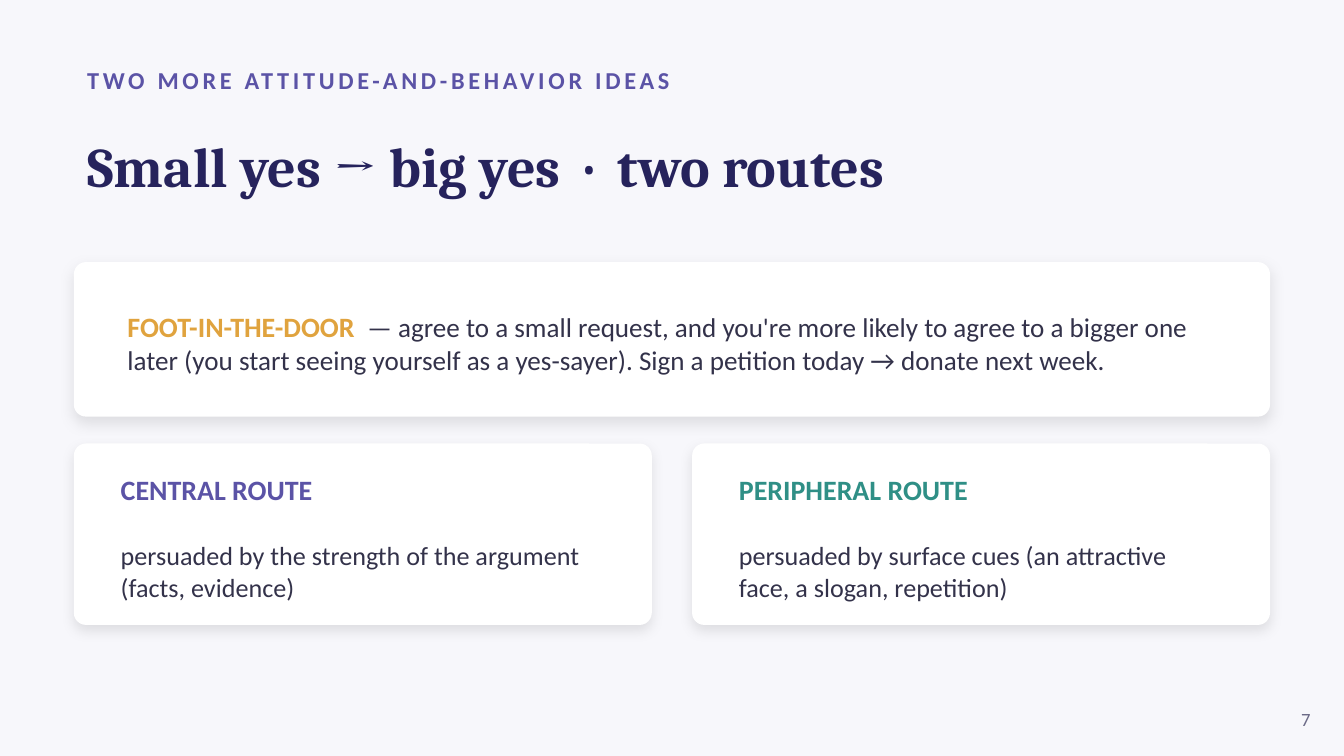
from lxml.etree import SubElement
from pptx import Presentation
from pptx.dml.color import RGBColor
from pptx.enum.shapes import MSO_SHAPE
from pptx.enum.text import MSO_ANCHOR, MSO_AUTO_SIZE, PP_ALIGN
from pptx.oxml import parse_xml
from pptx.oxml.ns import nsdecls, qn
from pptx.util import Inches, Pt

INK, NAVY, VIOLET, TEAL, AMBER = "33324A", "26235C", "5B53A6", "2F8F86", "E0A33E"


def rgb(value):
    return RGBColor.from_string(value)


def write(sp, box, paragraphs, align=PP_ALIGN.LEFT):
    """Place sp and fill it; each paragraph is a list of (text, size, colour, bold, font)."""
    sp.left, sp.top, sp.width, sp.height = [Inches(v) for v in box]
    tf = sp.text_frame
    tf.word_wrap = True
    tf.auto_size = MSO_AUTO_SIZE.NONE
    tf.vertical_anchor = MSO_ANCHOR.MIDDLE
    for i, runs in enumerate(paragraphs):
        p = tf.add_paragraph() if i else tf.paragraphs[0]
        p.alignment = align
        for text, size, colour, bold, font in runs:
            r = p.add_run()
            r.text = text
            r.font.size = Pt(size)
            r.font.bold = bold
            r.font.name = font
            r.font.color.rgb = rgb(colour)
    return tf


prs = Presentation()
prs.slide_width = Inches(10)
prs.slide_height = prs.slide_width * 9 // 16
s = prs.slides.add_slide(prs.slide_layouts[5])
s.background.fill.solid()
s.background.fill.fore_color.rgb = rgb("F7F7FB")
new_box = lambda: s.shapes.add_textbox(0, 0, 0, 0)

# Kicker and title
tf = write(new_box(), (0.55, 0.42, 9, 0.35),
           [[("TWO MORE ATTITUDE-AND-BEHAVIOR IDEAS", 13, VIOLET, True, "Calibri")]])
tf.paragraphs[0].runs[0].font._element.set("spc", "200")
write(s.shapes.title, (0.55, 0.78, 8.9, 0.9),
      [[("Small yes → big yes  ·  two routes", 30, NAVY, True, "Cambria")]])

# White cards with a soft shadow
for x, y, w, h in [(0.55, 1.95, 8.9, 1.15), (0.55, 3.3, 4.3, 1.35), (5.15, 3.3, 4.3, 1.35)]:
    card = s.shapes.add_shape(MSO_SHAPE.ROUNDED_RECTANGLE,
                              Inches(x), Inches(y), Inches(w), Inches(h))
    card.adjustments[0] = 0.09 / h
    card.fill.solid()
    card.fill.fore_color.rgb = rgb("FFFFFF")
    card.line.fill.background()
    card.shadow.inherit = False
    effects = card._element.spPr.find(qn("a:effectLst"))
    shadow = parse_xml(f'<a:outerShdw {nsdecls("a")} blurRad="{Pt(7)}" dist="{Pt(3)}" '
                       'dir="5400000" algn="bl" rotWithShape="0"/>')
    effects.append(shadow)
    black = SubElement(shadow, qn("a:srgbClr"), val="000000")
    SubElement(black, qn("a:alpha"), val="10000")

# Foot-in-the-door
write(new_box(), (0.85, 2.15, 8.3, 0.8), [[
    ("FOOT-IN-THE-DOOR  ", 15, AMBER, True, "Calibri"),
    ("— agree to a small request, and you're more likely to agree to a bigger one later "
     "(you start seeing yourself as a yes-sayer). Sign a petition today → donate next week.",
     14.5, INK, False, "Calibri")]])

# Two routes
routes = [
    (0.8, "CENTRAL ROUTE", VIOLET, "persuaded by the strength of the argument (facts, evidence)"),
    (5.4, "PERIPHERAL ROUTE", TEAL,
     "persuaded by surface cues (an attractive face, a slogan, repetition)"),
]
for x, name, colour, text in routes:
    tf = write(new_box(), (x, 3.5, 3.8, 1),
               [[(name, 15, colour, True, "Calibri")], [(text, 14, INK, False, "Calibri")]])
    tf.paragraphs[0].space_after = Pt(18)

# Page number
write(new_box(), (9.35, 5.2, 0.5, 0.3), [[("7", 10, "6B6A86", False, "Calibri")]], PP_ALIGN.RIGHT)

prs.save("out.pptx")
